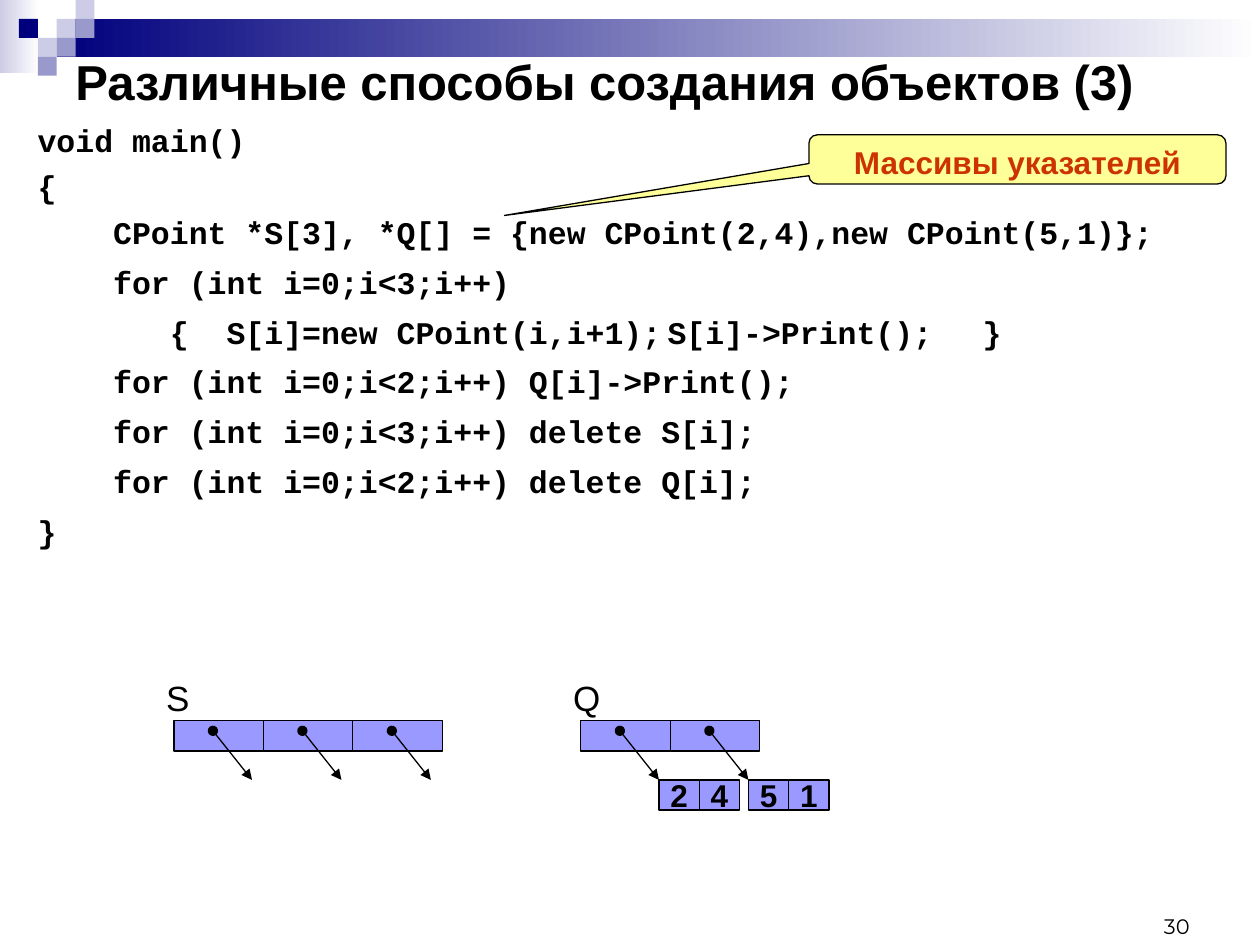
"""Builds a slide on arrays of pointers to objects in C++."""
from dataclasses import dataclass

from lxml import etree
from pptx import Presentation
from pptx import util as u
from pptx.dml.color import RGBColor
from pptx.enum import shapes, text
from pptx.oxml.ns import qn


@dataclass(frozen=True)
class Theme:
    """Colours, fonts and type sizes of the slide."""
    black: str = "000000"
    white: str = "FFFFFF"
    navy: str = "00007D"
    lavender: str = "CCCCE6"
    slate: str = "9999CC"
    cell: str = "9999FF"
    note: str = "FFFF99"
    accent: str = "CC3300"
    sans: str = "Arial"
    mono: str = "Courier New"
    number: str = "Montserrat"
    title: int = 28
    label: int = 20
    body: int = 18
    small: int = 12
    line: float = 0.75


class Deck:
    """Draws elements on a 100 by 75 grid of the current slide."""

    def __init__(self, theme):
        """Open a blank slide and measure its grid."""
        self.theme = theme
        self.show = Presentation()
        self.show.slide_width, self.show.slide_height = u.Inches(10), u.Inches(7.5)
        self.slide = self.show.slides.add_slide(self.show.slide_layouts[6])
        self.unit = self.show.slide_width / 100

    def grid(self, *spans):
        """Convert grid units to slide lengths."""
        return [u.Emu(round(span * self.unit)) for span in spans]

    def style(self, paragraph, size, font=None, bold=False, color=None):
        """Format the runs of a paragraph."""
        for run in paragraph.runs:
            run.font.size = u.Pt(size)
            run.font.name = font or self.theme.sans
            run.font.bold = bold
            run.font.color.rgb = RGBColor.from_string(color or self.theme.black)

    def box(self, at, fill, outlined=True, kind=shapes.MSO_SHAPE.RECTANGLE):
        """Add a preset shape with a plain or a two-colour fill."""
        shape = self.slide.shapes.add_shape(kind, *self.grid(*at))
        shape.shadow.inherit = False
        if isinstance(fill, tuple):
            shape.fill.gradient()
            shape.fill.gradient_angle = 0
            for stop, color in zip(shape.fill.gradient_stops, fill):
                stop.color.rgb = RGBColor.from_string(color)
        else:
            shape.fill.solid()
            shape.fill.fore_color.rgb = RGBColor.from_string(fill)
        if outlined:
            shape.line.color.rgb = RGBColor.from_string(self.theme.black)
            shape.line.width = u.Pt(self.theme.line)
        else:
            shape.line.fill.background()
        return shape

    def caption(self, shape, words, size, anchor="TOP", align="LEFT", wrap=True, **look):
        """Put one styled paragraph into a shape."""
        frame = shape.text_frame
        frame.text = words
        frame.word_wrap = wrap
        frame.vertical_anchor = text.MSO_ANCHOR[anchor]
        frame.paragraphs[0].alignment = text.PP_ALIGN[align]
        self.style(frame.paragraphs[0], size, **look)

    def label(self, at, words, size, **look):
        """Add a text box with one paragraph."""
        self.caption(self.slide.shapes.add_textbox(*self.grid(*at)), words, size, **look)

    def code(self, at, lines, column, gap):
        """Add code lines given as indent, line spacing, tab columns and words."""
        frame = self.slide.shapes.add_textbox(*self.grid(*at)).text_frame
        frame.word_wrap = True
        for index, (indent, spacing, tabs, words) in enumerate(lines):
            paragraph = frame.add_paragraph() if index else frame.paragraphs[0]
            paragraph.text = words
            paragraph.line_spacing = spacing
            paragraph.space_before = u.Pt(gap)
            self.style(paragraph, self.theme.body, self.theme.mono, True)
            props = paragraph._p.get_or_add_pPr()
            props.set("marL", "0")
            props.set("indent", str(self.grid(indent * column)[0]))
            if tabs:
                stops = etree.SubElement(props, qn("a:tabLst"))
                for tab in self.grid(*(column * stop for stop in tabs)):
                    etree.SubElement(stops, qn("a:tab"), pos=str(tab), algn="l")

    def pointer(self, left, top, run, drop):
        """Add an arrow that starts with a dot."""
        ends = self.grid(left, top, left + run, top + drop)
        arrow = self.slide.shapes.add_connector(shapes.MSO_CONNECTOR.STRAIGHT, *ends)
        arrow.line.color.rgb = RGBColor.from_string(self.theme.black)
        arrow.line.width = u.Pt(self.theme.line)
        line = arrow.line._get_or_add_ln()
        etree.SubElement(line, qn("a:headEnd"), type="oval")
        etree.SubElement(line, qn("a:tailEnd"), type="triangle")
        etree.SubElement(arrow._element.spPr, qn("a:effectLst"))

    def cells(self, left, top, width, values):
        """Add a row of cells and return their left edges."""
        edges = [left + width * index for index in range(len(values))]
        for edge, value in zip(edges, values):
            cell = self.box((edge, top, width, 2.4), self.theme.cell)
            if value:
                self.caption(cell, value, self.theme.body, "MIDDLE", "CENTER", False, bold=True)
        return edges

    def pointer_array(self, name, left, targets):
        """Add a named array of pointers with the objects they point to."""
        top = 57.2
        self.label((left - 1.6, top - 4, 4, 4.3), name, self.theme.label, wrap=False)
        for edge, target in zip(self.cells(left, top, 7.1, [""] * len(targets)), targets):
            self.cells(edge + 6.2, top + 4.7, 3.2, target)
            self.pointer(edge + 3.1, top + 0.8, 3.1, 3.9)


def main():
    """Compose the slide and save it."""
    theme = Theme()
    deck = Deck(theme)

    deck.box((0, 0, 3.1, 5.8), (theme.lavender, theme.white), False)
    deck.box((4.5, 1.5, 95.5, 3), (theme.navy, theme.white), False)
    mosaic = {
        theme.lavender: [(3, 1), (4, 0), (2, 2)],
        theme.slate: [(4, 1), (3, 2), (2, 3)],
        theme.navy: [(1, 1)],
    }
    tile = 1.5
    for color, places in mosaic.items():
        for column, row in places:
            deck.box((column * tile, row * tile, tile, tile), color, False)

    deck.label((90.2, 70, 5.2, 5), "30", theme.small,
               anchor="BOTTOM", align="RIGHT", font=theme.number)
    deck.label((5, 2.1, 90, 8.7), "Различные способы создания объектов (3)",
               theme.title, anchor="MIDDLE", bold=True)
    deck.code((2, 9.1, 98, 36.2), [
        (0, 1.0, (), "void main()"),
        (0, 1.0, (), "{"),
        (4, 1.0, (), "CPoint *S[3], *Q[] = {new CPoint(2,4),new CPoint(5,1)};"),
        (4, 1.1, (), "for (int i=0;i<3;i++)"),
        (7, 1.1, (11, 37, 54), "{\tS[i]=new CPoint(i,i+1);\tS[i]->Print();\t}"),
        (4, 1.1, (), "for (int i=0;i<2;i++) Q[i]->Print();"),
        (4, 1.1, (), "for (int i=0;i<3;i++) delete S[i];"),
        (4, 1.1, (), "for (int i=0;i<2;i++) delete Q[i];"),
        (0, 1.1, (), "}"),
    ], column=1.5, gap=4.7)

    deck.pointer_array("S", 13.8, ["", "", ""])
    deck.pointer_array("Q", 46.1, ["24", "51"])

    callout = deck.box((64.2, 10.7, 33.1, 3.9), theme.note,
                       kind=shapes.MSO_SHAPE.ROUNDED_RECTANGULAR_CALLOUT)
    for index, share in enumerate((-1.23, 1.14, 0.17)):
        callout.adjustments[index] = share
    deck.caption(callout, "Массивы указателей", theme.body,
                 align="CENTER", bold=True, color=theme.accent)

    deck.show.save("out.pptx")


if __name__ == "__main__":
    main()
